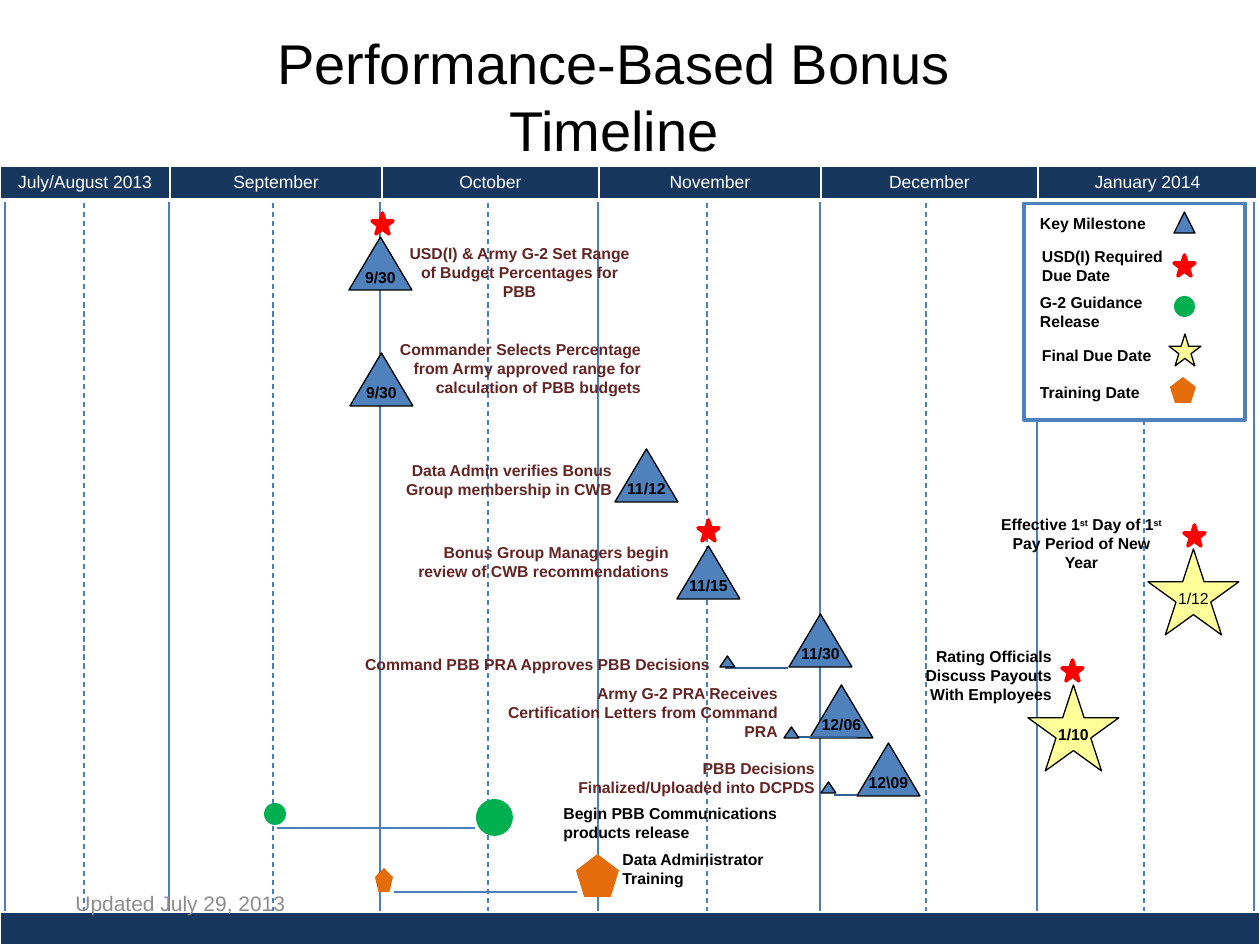
from lxml.etree import SubElement
from pptx import Presentation
from pptx.dml.color import RGBColor
from pptx.enum.dml import MSO_LINE
from pptx.enum.shapes import MSO_CONNECTOR, MSO_SHAPE as SHAPE
from pptx.enum.text import MSO_ANCHOR, PP_ALIGN
from pptx.oxml.ns import qn
from pptx.util import Emu, Pt

PX = 914400 // 126
FONT = "Arial"
LEFT, CENTER, RIGHT = PP_ALIGN.LEFT, PP_ALIGN.CENTER, PP_ALIGN.RIGHT

NAVY = RGBColor(0x17, 0x37, 0x5E)
GRID = RGBColor(0x4B, 0x7E, 0xBC)
BLUE = RGBColor(0x4F, 0x81, 0xBD)
LINK = RGBColor(0x37, 0x60, 0x92)
MAROON = RGBColor(0x63, 0x25, 0x23)
RED = RGBColor(0xFF, 0x00, 0x00)
YELLOW = RGBColor(0xFF, 0xFF, 0x99)
GREEN = RGBColor(0x00, 0xB0, 0x50)
ORANGE = RGBColor(0xE4, 0x6C, 0x0A)
GRAY = RGBColor(0x8C, 0x8C, 0x8C)
BLACK = RGBColor(0, 0, 0)
WHITE = RGBColor(0xFF, 0xFF, 0xFF)

# Content: positions and sizes in px
TITLE = "Performance-Based Bonus Timeline"
MONTHS = [("July/August 2013", 170), ("September", 212), ("October", 217),
          ("November", 222), ("December", 217), ("January 2014", 219)]
MONTH_EDGES = [5, 169, 380, 598, 820, 1037, 1254]
MID_MONTHS = [84, 273, 488, 707, 926, 1144]

# date, triangle left and top, label, label box, alignment
MILESTONES = [
    ("9/30", 349, 237, "USD(I) & Army G-2 Set Range of Budget Percentages for PBB",
     (393, 238, 253, 71), CENTER),
    ("9/30", 350, 353, "Commander Selects Percentage from Army approved range for "
     "calculation of PBB budgets", (383, 334, 270, 71), RIGHT),
    ("11/12", 615, 449, "Data Admin verifies Bonus Group membership in CWB",
     (392, 455, 232, 50), RIGHT),
    ("11/15", 677, 546, "Bonus Group Managers begin review of CWB recommendations",
     (403, 537, 278, 71), RIGHT),
    ("11/30", 789, 614, "Command PBB PRA Approves PBB Decisions",
     (336, 649, 386, 32), RIGHT),
    ("12/06", 810, 685, "Army G-2 PRA Receives Certification Letters from Command PRA",
     (490, 678, 300, 71), RIGHT),
    ("12\\09", 857, 743, "PBB Decisions Finalized/Uploaded into DCPDS",
     (543, 753, 284, 50), RIGHT),
]
# small triangle left and top, then the line to its milestone
LEAD_INS = [(720, 656, 725, 788, 668), (784, 727, 798, 857, 737),
            (821, 782, 834, 857, 795)]
# date, bold, star left and top, label pieces (every second one raised), box, alignment
FINAL_DATES = [
    ("1/12", False, 1148, 549, ["Effective 1", "st", " Day of 1", "st",
                                " Pay Period of New Year"], (982, 509, 199, 71), CENTER),
    ("1/10", True, 1028, 685, ["Rating Officials Discuss Payouts With Employees"],
     (901, 641, 163, 71), RIGHT),
]
RED_STARS = [(372, 213), (698, 520), (1184, 525), (1062, 660)]
# preset, colour, small marker, large marker, line, label, label box
RELEASES = [
    (SHAPE.OVAL, GREEN, (264, 803, 22, 22), (476, 799, 37, 37), (277, 475, 828),
     "Begin PBB Communications products release", (551, 798, 258, 50)),
    (SHAPE.REGULAR_PENTAGON, ORANGE, (375, 868, 18, 24), (576, 854, 43, 43),
     (394, 577, 892), "Data Administrator Training", (610, 844, 184, 50)),
]
# label, label box, preset, fill, outline, outline width, symbol box
LEGEND = [
    ("Key Milestone", (1034, 208, 140, 32), SHAPE.ISOSCELES_TRIANGLE, BLUE, BLACK, 0.75,
     (1174, 212, 21, 21)),
    ("USD(I) Required Due Date", (1036, 241, 141, 50), SHAPE.STAR_5_POINT, RED, RED, 2,
     (1174, 255, 21, 21)),
    ("G-2 Guidance Release", (1034, 287, 120, 50), SHAPE.OVAL, GREEN, None, 0,
     (1174, 296, 21, 21)),
    ("Final Due Date", (1036, 340, 129, 32), SHAPE.STAR_5_POINT, YELLOW, BLACK, 0.75,
     (1169, 334, 32, 32)),
    ("Training Date", (1034, 377, 118, 32), SHAPE.REGULAR_PENTAGON, ORANGE, None, 0,
     (1170, 377, 26, 26)),
]

prs = Presentation()
prs.slide_width, prs.slide_height = Emu(1260 * PX), Emu(945 * PX)
s = prs.slides.add_slide(prs.slide_layouts[5])


def emu(box):
    return [Emu(v * PX) for v in box]


def style(p, size, color, bold=False, align=LEFT):
    p.alignment = align
    for r in p.runs:
        r.font.name, r.font.size, r.font.bold = FONT, Pt(size), bold
        r.font.color.rgb = color


def add_line(x1, y1, x2, y2, color=GRID, width=0.75, dash=False):
    c = s.shapes.add_connector(MSO_CONNECTOR.STRAIGHT, *emu((x1, y1, x2, y2)))
    c.line.color.rgb, c.line.width = color, Pt(width)
    if dash:
        c.line.dash_style = MSO_LINE.DASH
    SubElement(c._element.spPr, qn("a:effectLst"))


def add_marker(preset, box, fill, line=None, width=0.75, text="", bold=True):
    sp = s.shapes.add_shape(preset, *emu(box))
    sp.shadow.inherit = False
    sp.fill.solid()
    sp.fill.fore_color.rgb = fill
    if line is None:
        sp.line.fill.background()
    else:
        sp.line.color.rgb, sp.line.width = line, Pt(width)
    if text:
        tf = sp.text_frame
        tf.text, tf.word_wrap, tf.vertical_anchor = text, False, MSO_ANCHOR.MIDDLE
        style(tf.paragraphs[0], 9, BLACK, bold, CENTER)


def add_label(pieces, box, color=BLACK, align=LEFT, size=9, bold=True, inset=None):
    tf = s.shapes.add_textbox(*emu(box)).text_frame
    tf.word_wrap = True
    if inset is not None:
        tf.margin_left = tf.margin_right = Emu(inset * PX)
    p = tf.paragraphs[0]
    for i, piece in enumerate(pieces):
        r = p.add_run()
        r.text = piece
        if i % 2:
            r._r.get_or_add_rPr().set("baseline", "30000")
    style(p, size, color, bold, align)


def add_row(box, columns, borders=()):
    shape = s.shapes.add_table(1, len(columns), *emu(box))
    for (text, width), col, cell in zip(columns, shape.table.columns,
                                        shape.table.rows[0].cells):
        col.width = Emu(width * PX)
        p = cell.text_frame.paragraphs[0]
        if text:
            p.text = text
            style(p, 10, WHITE, align=CENTER)
        else:
            SubElement(p._p, qn("a:endParaRPr"), sz="900")
        tcPr = cell._tc.get_or_add_tcPr()
        for side, width_pt in borders:
            ln = SubElement(tcPr, qn(f"a:{side}"), w=str(Pt(width_pt)))
            SubElement(SubElement(ln, qn("a:solidFill")), qn("a:srgbClr"), val=str(WHITE))
        cell.fill.solid()
        cell.fill.fore_color.rgb = NAVY


# Month grid
for x in MID_MONTHS:
    add_line(x, 176, x, 940, dash=True)
for x in MONTH_EDGES:
    add_line(x, 176, x, 940)

# Title
title = s.shapes.title
title.left, title.top, title.width, title.height = emu((220, 32, 788, 127))
title.text_frame.text = TITLE
title.text_frame.vertical_anchor = MSO_ANCHOR.MIDDLE
style(title.text_frame.paragraphs[0], 32, BLACK, align=CENTER)

# Milestones, lead-ins and due dates
for date, x, y, text, box, align in MILESTONES:
    add_marker(SHAPE.ISOSCELES_TRIANGLE, (x, y, 63, 53), BLUE, BLACK, text=date)
    add_label([text], box, MAROON, align)
for x, y, x1, x2, line_y in LEAD_INS:
    add_line(x1, line_y, x2, line_y, LINK, 1)
    add_marker(SHAPE.ISOSCELES_TRIANGLE, (x, y, 15, 11), BLUE, BLACK)
for date, bold, x, y, pieces, box, align in FINAL_DATES:
    add_marker(SHAPE.STAR_5_POINT, (x, y, 91, 86), YELLOW, BLACK, text=date, bold=bold)
    add_label(pieces, box, align=align)
for x, y in RED_STARS:
    add_marker(SHAPE.STAR_5_POINT, (x, y, 21, 21), RED, RED, 2)

# Legend
add_marker(SHAPE.RECTANGLE, (1024, 203, 221, 217), WHITE, BLUE, 2)
for text, box, preset, fill, line, width, symbol in LEGEND:
    add_label([text], box, inset=6)
    add_marker(preset, symbol, fill, line, width)

# Releases and training
for preset, color, small, large, (x1, x2, y), text, box in RELEASES:
    add_line(x1, y, x2, y)
    add_marker(preset, small, color)
    add_marker(preset, large, color)
    add_label([text], box)

# Header, footer bar and date of update
add_row((0, 912, 1260, 33), [("", 1260)])
add_row((0, 166, 1257, 34), MONTHS, [("lnL", 1), ("lnR", 1), ("lnT", 1), ("lnB", 3)])
add_label(["Updated July 29, 2013"], (63, 884, 294, 40), GRAY, size=12, bold=False)

prs.save("out.pptx")
